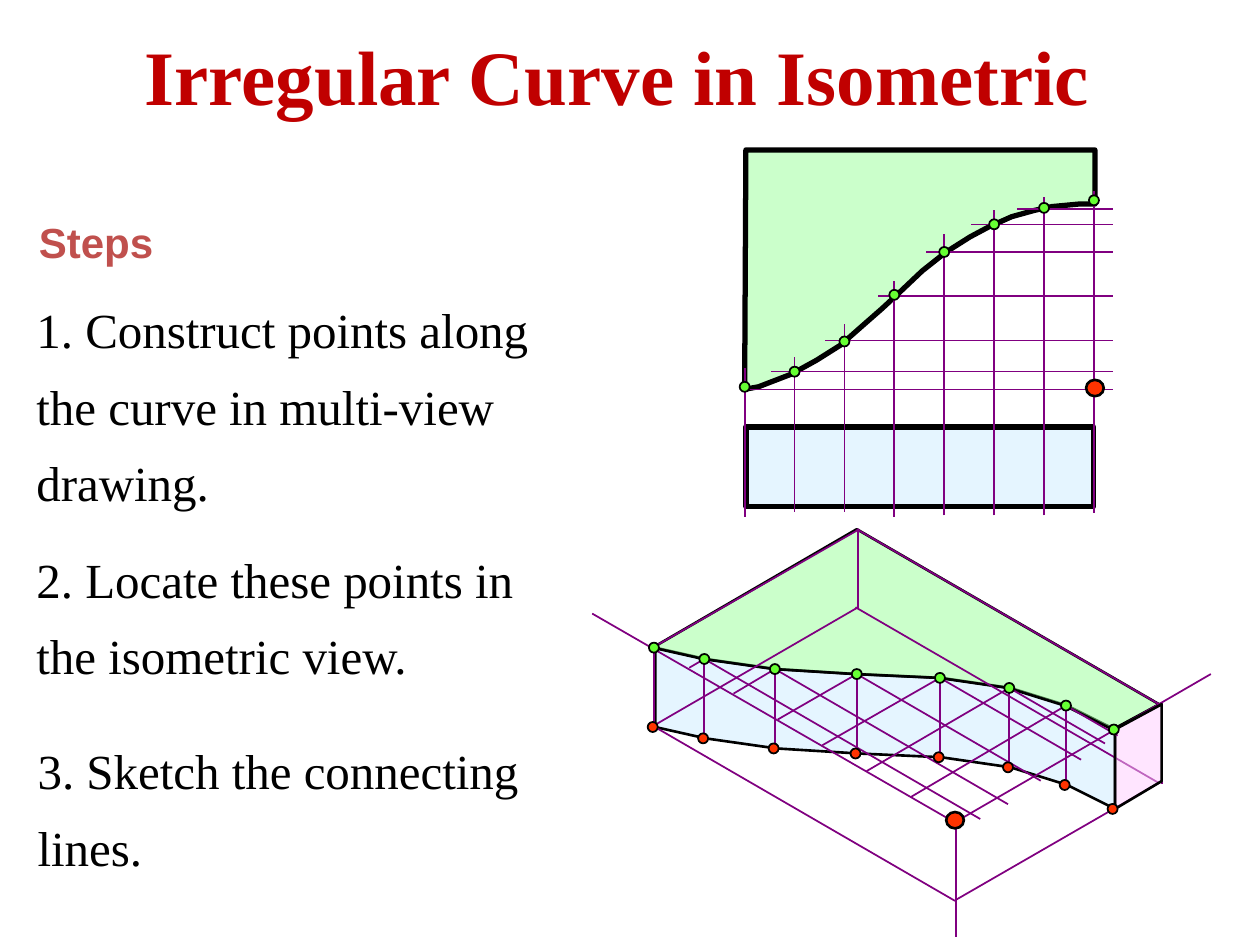
from pptx import Presentation
from pptx.dml.color import RGBColor
from pptx.enum.shapes import MSO_CONNECTOR, MSO_SHAPE
from pptx.enum.text import MSO_AUTO_SIZE
from pptx.oxml.ns import qn
from pptx.oxml.xmlchemy import OxmlElement
from pptx.util import Cm, Pt

STRAIGHT = MSO_CONNECTOR.STRAIGHT
RECTANGLE = MSO_SHAPE.RECTANGLE
OVAL = MSO_SHAPE.OVAL
FIT_TEXT = MSO_AUTO_SIZE.SHAPE_TO_FIT_TEXT

BLACK = RGBColor(0x00, 0x00, 0x00)
TITLE_RED = RGBColor(0xC0, 0x00, 0x00)
STEPS_RED = RGBColor(0xC0, 0x50, 0x4D)
PURPLE = RGBColor(0x80, 0x00, 0x80)
FACE_GREEN = RGBColor(0x99, 0xFF, 0x99)
FACE_BLUE = RGBColor(0xCC, 0xEC, 0xFF)
FACE_PINK = RGBColor(0xFF, 0xCC, 0xFF)
DOT_GREEN = RGBColor(0x66, 0xFF, 0x33)
DOT_RED = RGBColor(0xFF, 0x33, 0x00)

SERIF = "Times New Roman"

# Multi-view drawing: evenly spaced stations along the curve
STATION_LEFT, STATION_STEP = 5.91, 0.396
# Per station: point height, top and bottom of the vertical projector
STATIONS = [
    (3.07, 2.92, 4.10), (2.95, 2.83, 4.06), (2.71, 2.57, 4.06), (2.34, 2.23, 4.10),
    (2.00, 1.86, 4.09), (1.78, 1.67, 4.09), (1.65, 1.56, 4.09), (1.59, 1.52, 4.07),
]
# Horizontal projectors: left end and height
LEVELS = [(5.91, 3.09), (6.12, 2.95), (6.55, 2.70), (6.97, 2.35),
          (7.35, 2.00), (7.71, 1.78), (8.07, 1.66)]
LEVEL_RIGHT = 8.83
PLAN_OUTLINE = [
    (5.92, 1.19), (8.69, 1.19), (8.69, 1.62), (8.56, 1.62), (8.35, 1.64), (8.21, 1.67),
    (8.03, 1.72), (7.85, 1.80), (7.70, 1.88), (7.51, 2.00), (7.32, 2.15), (7.13, 2.33),
    (7.00, 2.45), (6.84, 2.59), (6.67, 2.74), (6.48, 2.86), (6.28, 2.97), (6.02, 3.07),
    (5.91, 3.09),
]

# Isometric view: curve on the top face, its height and the receding slope
ISO_CURVE = [(5.19, 5.14), (5.59, 5.23), (6.15, 5.31), (6.80, 5.35),
             (7.46, 5.38), (8.01, 5.46), (8.46, 5.60), (8.84, 5.79)]
ISO_HEIGHT = 0.63
ISO_SLOPE = 0.58
RECEDING_ENDS = [7.78, 8.00, 8.26, 8.58, 8.77, 8.87]
EDGE_START, EDGE_STEP = (5.47, 5.30), (0.352, 0.205)
ISO_BOX = [
    ((5.17, 5.77), (6.81, 4.82)), ((6.79, 4.82), (9.19, 6.21)), ((6.81, 4.83), (6.81, 4.20)),
    ((5.18, 5.14), (6.82, 4.20)), ((6.80, 4.20), (9.20, 5.59)), ((5.19, 5.78), (5.19, 5.14)),
    ((5.18, 5.76), (7.58, 7.15)), ((9.22, 6.22), (9.22, 5.58)), ((7.59, 7.14), (9.22, 6.20)),
]
ISO_AXES = [((7.60, 6.54), (4.70, 4.87)), ((7.59, 6.52), (7.59, 7.44)),
            ((7.59, 6.52), (9.61, 5.35))]

STEPS = [
    ("1. Construct points along the curve in multi-view drawing.", 0.19, 2.19, 4.65, 1.94),
    ("2. Locate these points in the isometric view.", 0.19, 4.17, 4.55, 1.27),
    ("3. Sketch the connecting lines.", 0.20, 5.69, 4.76, 1.33),
]


def length(inches):
    return Cm(inches * 2.54)


def shifted(points, dx, dy=0.0):
    return [(x + dx, y + dy) for x, y in points]


def style(shape, color, line_width, translucent=False):
    shape.shadow.inherit = False
    shape.fill.solid()
    shape.fill.fore_color.rgb = color
    shape.line.color.rgb = BLACK
    shape.line.width = Pt(line_width)
    if translucent:
        alpha = OxmlElement("a:alpha")
        alpha.set("val", "50000")
        fill = shape._element.spPr.find(qn("a:solidFill"))
        fill.find(qn("a:srgbClr")).append(alpha)


def add_face(slide, points, color, line_width=1.5):
    corners = [(length(x), length(y)) for x, y in points]
    builder = slide.shapes.build_freeform(*corners[0])
    builder.add_line_segments(corners[1:], close=True)
    style(builder.convert_to_shape(), color, line_width, translucent=True)


def add_line(slide, start, end, width=1):
    line = slide.shapes.add_connector(STRAIGHT, *map(length, (*start, *end)))
    line.line.color.rgb = PURPLE
    line.line.width = Pt(width)
    line._element.spPr.append(OxmlElement("a:effectLst"))


def add_dot(slide, center, color, width=0.08, height=0.08, line_width=1):
    x, y = center
    box = (x - width / 2, y - height / 2, width, height)
    style(slide.shapes.add_shape(OVAL, *map(length, box)), color, line_width)


def add_text(slide, text, box, size, color, font=SERIF, bold=False, wrap=False, spacing=None):
    frame = slide.shapes.add_textbox(*map(length, box)).text_frame
    frame.text = text
    frame.word_wrap = wrap
    frame.auto_size = FIT_TEXT
    paragraph = frame.paragraphs[0]
    paragraph.line_spacing = spacing
    run_font = paragraph.runs[0].font
    run_font.name, run_font.size, run_font.bold = font, Pt(size), bold
    run_font.color.rgb = color


def draw_multi_view(slide):
    add_face(slide, PLAN_OUTLINE, FACE_GREEN, 3)
    front_view = slide.shapes.add_shape(RECTANGLE, *map(length, (5.92, 3.39, 2.76, 0.63)))
    style(front_view, FACE_BLUE, 3, translucent=True)

    # Projectors, then the points on the curve
    curve = []
    for index, (height, top, bottom) in enumerate(STATIONS):
        x = STATION_LEFT + index * STATION_STEP
        add_line(slide, (x, bottom), (x, top))
        curve.append((x, height))
    for left, y in LEVELS:
        add_line(slide, (left, y), (LEVEL_RIGHT, y), 0.75)
    for point in curve:
        add_dot(slide, point, DOT_GREEN)
    add_dot(slide, (8.69, 3.08), DOT_RED, 0.14, 0.13, 1.5)


def draw_isometric(slide):
    # Curved front face and top face
    front_top = shifted(ISO_CURVE, 0.01)
    front_bottom = shifted(front_top, 0, ISO_HEIGHT)
    add_face(slide, front_bottom + front_top[::-1], FACE_BLUE)
    add_face(slide, shifted(ISO_CURVE, -0.01)[::-1] + [(6.80, 4.20), (9.20, 5.59)], FACE_GREEN)

    # Enclosing box and axes
    for start, end in ISO_BOX + ISO_AXES:
        add_line(slide, start, end)
    inner_points = ISO_CURVE[1:-1]
    for index, point in enumerate(inner_points):
        edge = [first + index * step for first, step in zip(EDGE_START, EDGE_STEP)]
        add_line(slide, point, edge)

    # End face
    add_face(slide, [(8.85, 5.79), (8.85, 6.42), (9.22, 6.20), (9.22, 5.59)], FACE_PINK)

    # Heights and receding lines through the inner points
    for (x, y), end_x in zip(inner_points, RECEDING_ENDS):
        add_line(slide, (x, y + ISO_HEIGHT), (x, y))
        add_line(slide, (x, y), (end_x, y + (end_x - x) * ISO_SLOPE))

    # Points on the top and bottom curves
    for point in ISO_CURVE:
        add_dot(slide, point, DOT_GREEN)
    for point in shifted(ISO_CURVE, -0.01, ISO_HEIGHT):
        add_dot(slide, point, DOT_RED)
    add_dot(slide, (7.58, 6.51), DOT_RED, 0.14, 0.13, 1.5)


def main():
    presentation = Presentation()
    presentation.slide_width = Cm(25.4)
    presentation.slide_height = Cm(19.05)
    slide = presentation.slides.add_slide(presentation.slide_layouts[6])

    draw_multi_view(slide)
    draw_isometric(slide)

    # Title and steps
    add_text(slide, "Irregular Curve in Isometric", (1.05, 0.18, 7.77, 0.84), 44,
             TITLE_RED, bold=True)
    add_text(slide, "Steps", (0.21, 1.67, 1.11, 0.5), 24, STEPS_RED, "Arial", bold=True)
    for text, *box in STEPS:
        add_text(slide, text, box, 28, BLACK, wrap=True, spacing=1.3)

    presentation.save("out.pptx")


if __name__ == "__main__":
    main()
